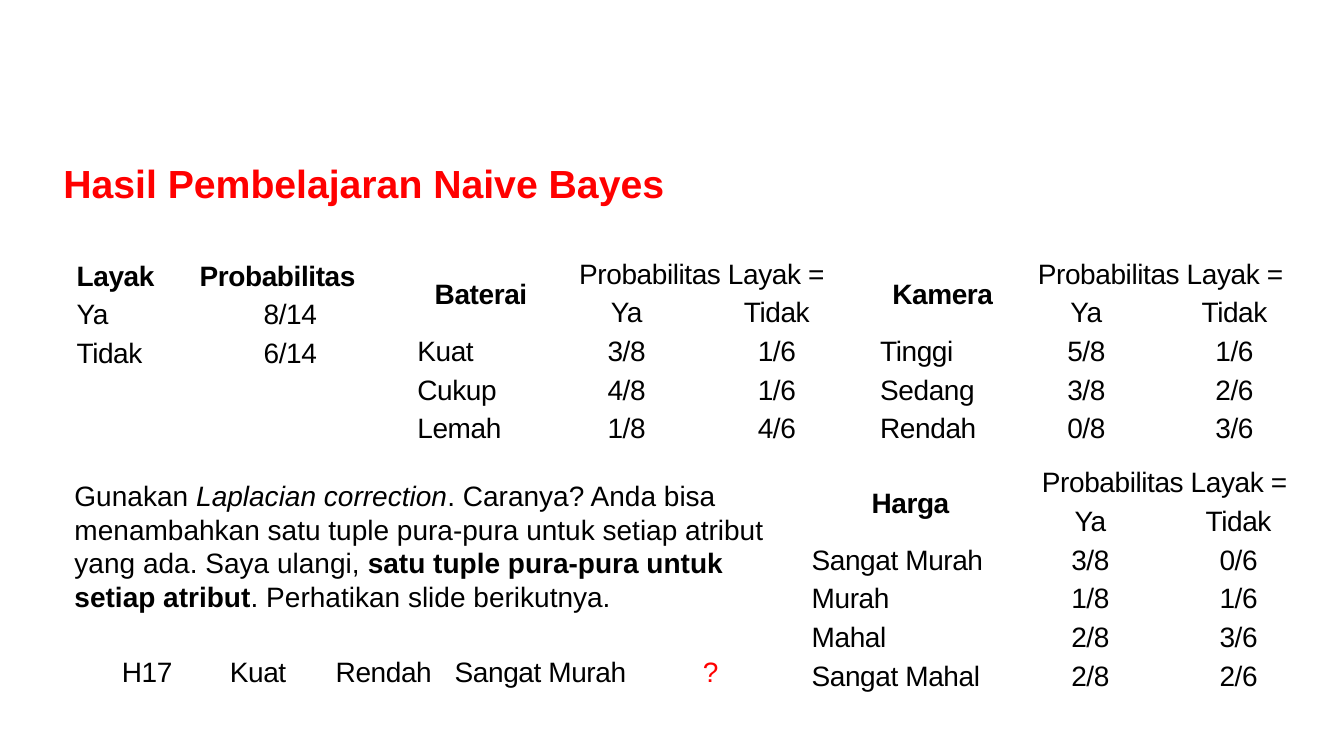
from pptx import Presentation
from pptx.dml.color import RGBColor
from pptx.enum.text import MSO_ANCHOR as Anchor, MSO_AUTO_SIZE as AutoSize, PP_ALIGN as Align
from pptx.util import Inches, Pt

COLORS = {"text": "000000", "accent": "FF0000", "paper": "FFFFFF"}
ROW_HEIGHT = 0.38


class SlideBuilder:
    """Holds the text style and the current slide."""

    font_name = "Arial"
    body_size = 20
    table_tracking = -30  # hundredths of a point

    def __init__(self, slide):
        self.slide = slide

    def run(self, paragraph, text, size=body_size, color="text", bold=False, italic=False):
        run = paragraph.add_run()
        run.text = text
        font = run.font
        font.name, font.size = self.font_name, Pt(size)
        font.bold, font.italic = bold, italic
        font.color.rgb = RGBColor.from_string(COLORS[color])
        return run

    def text(self, box, runs, anchor=Anchor.TOP, margin=0.05, grow=False):
        """Add a one-paragraph text box; runs are (text, style) pairs."""
        shape = self.slide.shapes.add_textbox(*map(Inches, box))
        frame = shape.text_frame
        frame.word_wrap = True
        frame.vertical_anchor = anchor
        frame.margin_top = frame.margin_bottom = Inches(margin)
        if grow:
            frame.auto_size = AutoSize.SHAPE_TO_FIT_TEXT
        for text, style in runs:
            self.run(frame.paragraphs[0], text, **style)

    def cell(self, cell, text, align=Align.CENTER, **style):
        cell.margin_left = cell.margin_right = Inches(0.07)
        cell.margin_top = cell.margin_bottom = 0
        paragraph = cell.text_frame.paragraphs[0]
        paragraph.alignment = align
        paragraph.line_spacing = 1.15
        run = self.run(paragraph, text, **style)
        run.font._element.set("spc", str(self.table_tracking))

    def table(self, left, top, widths, heights, fill=None):
        """Add an empty, unbanded table."""
        frame = self.slide.shapes.add_table(
            len(heights), len(widths), Inches(left), Inches(top),
            Inches(sum(widths)), Inches(sum(heights)))
        table = frame.table
        table.first_row = table.horz_banding = False
        for column, width in zip(table.columns, widths):
            column.width = Inches(width)
        for row, height in zip(table.rows, heights):
            row.height = Inches(height)
        for cell in table.iter_cells():
            if fill:
                cell.fill.solid()
                cell.fill.fore_color.rgb = RGBColor.from_string(COLORS[fill])
            else:
                cell.fill.background()
        return table

    def conditional_table(self, left, top, widths, attribute, rows):
        """Add the probabilities of one attribute, given each class."""
        table = self.table(left, top, widths, [ROW_HEIGHT] * (len(rows) + 2))
        table.cell(0, 0).merge(table.cell(1, 0))
        table.cell(0, 1).merge(table.cell(0, 2))
        self.cell(table.cell(0, 0), attribute, bold=True)
        table.cell(0, 0).vertical_anchor = Anchor.MIDDLE
        self.cell(table.cell(0, 1), "Probabilitas Layak =")
        for column, label in enumerate(("Ya", "Tidak"), start=1):
            self.cell(table.cell(1, column), label)
        for row, values in enumerate(rows, start=2):
            for column, value in enumerate(values):
                align = Align.CENTER if column else Align.JUSTIFY
                self.cell(table.cell(row, column), value, align)


def main():
    presentation = Presentation()
    presentation.slide_width, presentation.slide_height = Inches(13.33), Inches(7.5)
    builder = SlideBuilder(presentation.slides.add_slide(presentation.slide_layouts[6]))

    # Title
    builder.text((0.53, 1.46, 12.14, 0.7),
                 [("Hasil Pembelajaran Naive Bayes", dict(size=28, color="accent", bold=True))],
                 anchor=Anchor.MIDDLE, margin=0.1)

    # Class probabilities
    class_table = builder.table(0.69, 2.54, [1.22, 1.94], [ROW_HEIGHT, 0.23, ROW_HEIGHT])
    class_rows = [("Layak", "Probabilitas"), ("Ya", "8/14"), ("Tidak", "6/14")]
    for row, values in enumerate(class_rows):
        for column, value in enumerate(values):
            align = Align.CENTER if row and column else Align.LEFT
            builder.cell(class_table.cell(row, column), value, align, bold=row == 0)

    # Attribute probabilities
    builder.conditional_table(4.07, 2.52, [1.4, 1.49, 1.49], "Baterai", [
        ("Kuat", "3/8", "1/6"), ("Cukup", "4/8", "1/6"), ("Lemah", "1/8", "4/6")])
    builder.conditional_table(8.66, 2.52, [1.38, 1.47, 1.47], "Kamera", [
        ("Tinggi", "5/8", "1/6"), ("Sedang", "3/8", "2/6"), ("Rendah", "0/8", "3/6")])
    builder.conditional_table(7.98, 4.59, [2.1, 1.47, 1.47], "Harga", [
        ("Sangat Murah", "3/8", "0/6"), ("Murah", "1/8", "1/6"),
        ("Mahal", "2/8", "3/6"), ("Sangat Mahal", "2/8", "2/6")])

    # Test record
    record_table = builder.table(0.71, 6.47, [1.5, 1.05, 1.18, 1.99, 1.24], [ROW_HEIGHT], "paper")
    record = ["H17", "Kuat", "Rendah", "Sangat Murah", "?"]
    for column, value in enumerate(record):
        align = Align.CENTER if value in ("H17", "?") else Align.JUSTIFY
        color = "accent" if value == "?" else "text"
        builder.cell(record_table.cell(0, column), value, align, color=color)

    # Explanation
    builder.text((0.64, 4.7, 7.05, 1.45), [
        ("Gunakan ", {}),
        ("Laplacian correction", dict(italic=True)),
        (". Caranya? Anda bisa menambahkan satu tuple pura-pura untuk setiap atribut "
         "yang ada. Saya ulangi, ", {}),
        ("satu tuple pura-pura untuk setiap atribut", dict(bold=True)),
        (". Perhatikan slide berikutnya.", {}),
    ], grow=True)

    presentation.save("out.pptx")


if __name__ == "__main__":
    main()
